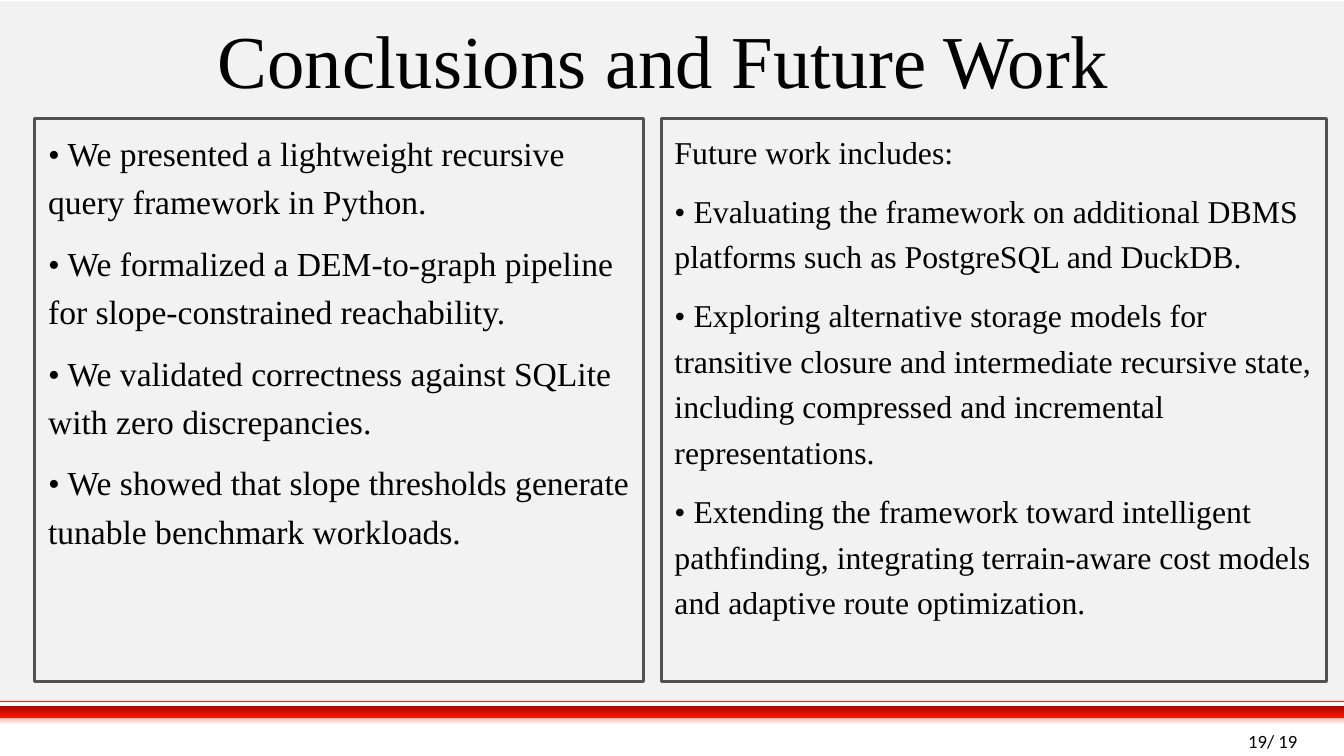
"""Build the conclusions and future work slide."""
from pptx import Presentation
from pptx.dml.color import RGBColor
from pptx.enum.shapes import MSO_CONNECTOR, MSO_SHAPE
from pptx.enum.text import MSO_ANCHOR, PP_ALIGN
from pptx.oxml.ns import qn
from pptx.util import Inches, Pt

RECTANGLE = MSO_SHAPE.RECTANGLE
STRAIGHT = MSO_CONNECTOR.STRAIGHT
TOP, MIDDLE = MSO_ANCHOR.TOP, MSO_ANCHOR.MIDDLE
LEFT, CENTER, RIGHT = PP_ALIGN.LEFT, PP_ALIGN.CENTER, PP_ALIGN.RIGHT

WIDTH = 10
HEIGHT = WIDTH * 9 / 16
SERIF, SANS = "Times New Roman", "Calibri"
BLACK, PALE_GRAY, PANEL_BORDER, RED = "000000", "F2F2F2", "525252", "FF2400"
RULE_Y = 5.22
PANEL_TOP, PANEL_HEIGHT = 0.88, 4.19

TITLE = "Conclusions and Future Work "
PAGE_NUMBER = "19/ 19"
CONCLUSIONS = [
    "• We presented a lightweight recursive query framework in Python.",
    "• We formalized a DEM-to-graph pipeline for slope-constrained reachability.",
    "• We validated correctness against SQLite with zero discrepancies.",
    "• We showed that slope thresholds generate tunable benchmark workloads.",
]
FUTURE_WORK = [
    "Future work includes:",
    "• Evaluating the framework on additional DBMS platforms such as PostgreSQL and DuckDB.",
    "• Exploring alternative storage models for transitive closure and intermediate "
    "recursive state, including compressed and incremental representations.",
    "• Extending the framework toward intelligent pathfinding, integrating "
    "terrain-aware cost models and adaptive route optimization.",
]
PANELS = [(0.26, 4.53, 18, CONCLUSIONS), (4.92, 4.95, 17, FUTURE_WORK)]
GLOW = (5.26, 0.13, RED, "FFFFFF")
RED_BANDS = [(5.25, 0.06, "FFFFFF", "00CC99"), (5.25, 0.09, "A00800", "FF1600")]


def rgb(color):
    return RGBColor.from_string(color)


def add_rectangle(slide, left, top, width, height):
    rectangle = slide.shapes.add_shape(
        RECTANGLE, Inches(left), Inches(top), Inches(width), Inches(height))
    rectangle.shadow.inherit = False
    rectangle.line.fill.background()
    return rectangle


def add_band(slide, top, height, upper, lower):
    band = add_rectangle(slide, 0, top, WIDTH, height)
    band.fill.gradient()
    band.fill.gradient_angle = 270
    for stop, position, color in zip(band.fill.gradient_stops, (0, 1), (upper, lower)):
        stop.position = position
        stop.color.rgb = rgb(color)


def add_rule(slide):
    rule = slide.shapes.add_connector(
        STRAIGHT, 0, Inches(RULE_Y), Inches(WIDTH), Inches(RULE_Y))
    rule.line.color.rgb = rgb(RED)
    rule.line.width = Pt(0.75)
    properties = rule._element.spPr
    properties.append(properties.makeelement(qn("a:effectLst"), {}))


def write(shape, lines, size, font, align, anchor=TOP):
    frame = shape.text_frame
    frame.word_wrap = True
    frame.vertical_anchor = anchor
    frame.text = "\n".join(lines)
    for paragraph in frame.paragraphs:
        paragraph.alignment = align
        for run in paragraph.runs:
            run.font.size = Pt(size)
            run.font.name = font
            run.font.color.rgb = rgb(BLACK)


def add_label(slide, left, top, width, height, text, *style):
    label = slide.shapes.add_textbox(
        Inches(left), Inches(top), Inches(width), Inches(height))
    write(label, [text], *style)


def add_panel(slide, left, width, size, lines):
    panel = add_rectangle(slide, left, PANEL_TOP, width, PANEL_HEIGHT)
    panel.fill.background()
    panel.line.color.rgb = rgb(PANEL_BORDER)
    panel.line.width = Pt(1.5)
    write(panel, lines, size, SERIF, LEFT)
    for index, paragraph in enumerate(panel.text_frame.paragraphs):
        paragraph.line_spacing = 1.2
        paragraph.space_before = Pt(7 if index else 0)


def main():
    deck = Presentation()
    deck.slide_width, deck.slide_height = Inches(WIDTH), Inches(HEIGHT)
    slide = deck.slides.add_slide(deck.slide_layouts[6])

    backdrop = add_rectangle(slide, 0, 0.01, WIDTH, RULE_Y)
    backdrop.fill.solid()
    backdrop.fill.fore_color.rgb = rgb(PALE_GRAY)
    add_band(slide, *GLOW)
    add_rule(slide)
    for band in RED_BANDS:
        add_band(slide, *band)

    add_label(slide, 0.69, 0, 8.62, 0.88, TITLE, 40, SERIF, CENTER, MIDDLE)
    for panel in PANELS:
        add_panel(slide, *panel)
    add_label(slide, 7.67, 5.38, 2.08, 0.18, PAGE_NUMBER, 10, SANS, RIGHT)
    deck.save("out.pptx")


if __name__ == "__main__":
    main()
